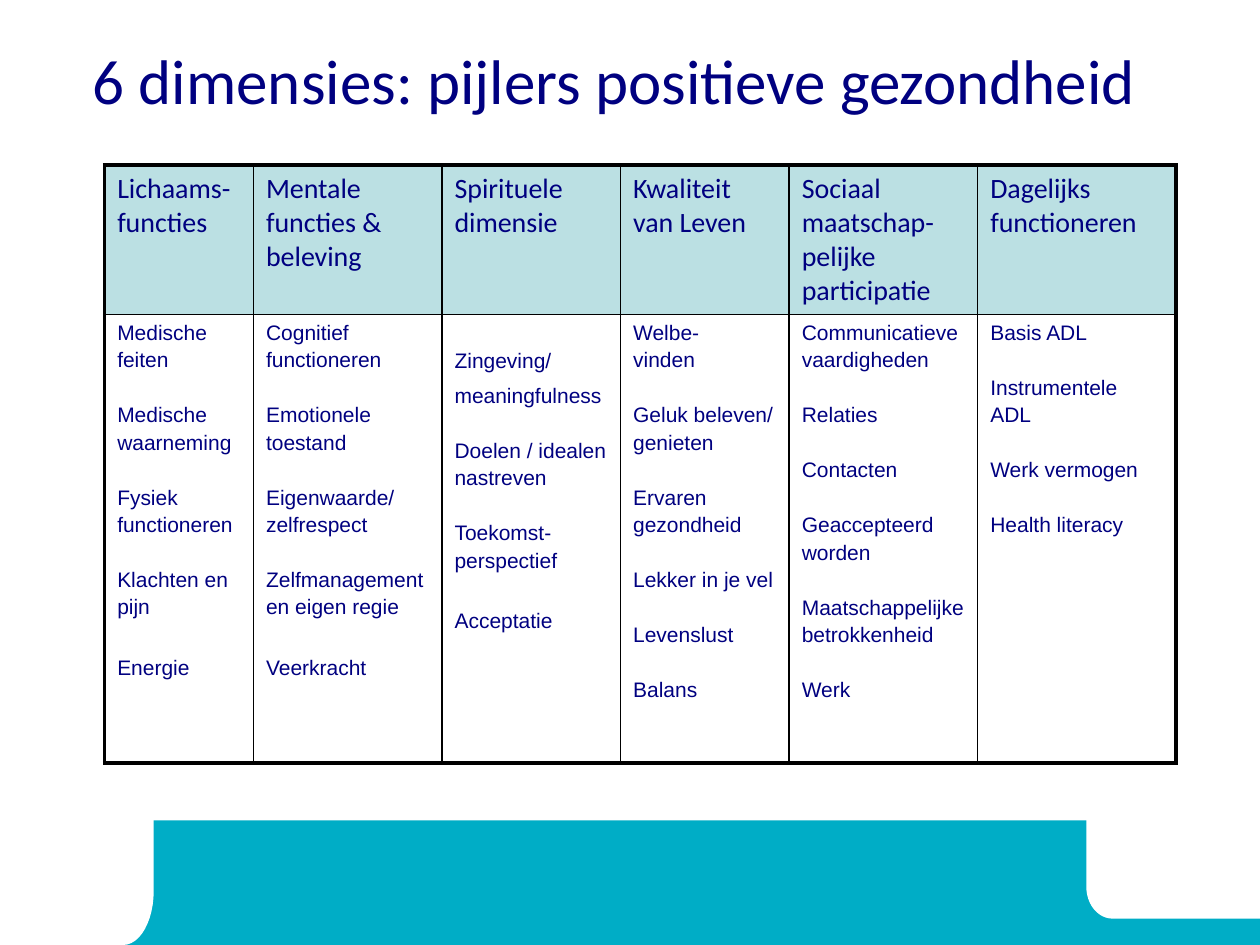
"""Builds a slide with the six dimensions of positive health in a table."""
from dataclasses import dataclass
from math import cos, pi, sin

from lxml import etree
from pptx import Presentation
from pptx.dml.color import RGBColor
from pptx.enum.shapes import MSO_SHAPE
from pptx.enum.text import MSO_ANCHOR, PP_ALIGN
from pptx.oxml.ns import qn
from pptx.util import Cm, Pt

RECTANGLE = MSO_SHAPE.RECTANGLE
MIDDLE = MSO_ANCHOR.MIDDLE
LEFT = PP_ALIGN.LEFT

COLOURS = {
    "text": "000080",
    "band": "00ADC6",
    "panel": "FFFFFF",
    "heading": "BBE0E3",
    "border": "000000",
}
HEADING_FONT = "Calibri"
BODY_FONT = "Arial"
LINE_GAP = 2.2
GROUP_GAP = 18
OTHER_GAPS = {"meaningfulness": 6.8, "Energie": 21, "Veerkracht": 21, "Acceptatie": 21}
OUTER_BORDER = 2.25
INNER_BORDER = 1


@dataclass
class Dimension:
    """One column: width in cm, heading, groups of lines and top margin in cm."""
    width: float
    heading: str
    groups: list
    top: float = 0.13


DIMENSIONS = [
    Dimension(3.0, "Lichaams-functies", [
        "Medische\nfeiten", "Medische\nwaarneming", "Fysiek\nfunctioneren",
        "Klachten en\npijn", "Energie"]),
    Dimension(3.8, "Mentale functies & beleving", [
        "Cognitief\nfunctioneren", "Emotionele\ntoestand", "Eigenwaarde/\nzelfrespect",
        "Zelfmanagement\nen eigen regie", "Veerkracht"]),
    Dimension(3.6, "Spirituele dimensie", [
        "Zingeving/", "meaningfulness", "Doelen / idealen\nnastreven",
        "Toekomst-\nperspectief", "Acceptatie"], top=0.69),
    Dimension(3.4, "Kwaliteit van Leven", [
        "Welbe-\nvinden", "Geluk beleven/\ngenieten", "Ervaren\ngezondheid",
        "Lekker in je vel", "Levenslust", "Balans"]),
    Dimension(3.8, "Sociaal maatschap-pelijke participatie", [
        "Communicatieve\nvaardigheden", "Relaties", "Contacten",
        "Geaccepteerd\nworden", "Maatschappelijke\nbetrokkenheid", "Werk"]),
    Dimension(4.0, "Dagelijks functioneren", [
        "Basis ADL", "Instrumentele\nADL", "Werk vermogen", "Health literacy"]),
]


@dataclass
class HealthSlide:
    """Holds the slide and draws its elements in one style; lengths are in cm."""
    slide: object

    def paint(self, shape, colour):
        """Give a shape a plain fill without line or shadow."""
        shape.shadow.inherit = False
        shape.fill.solid()
        shape.fill.fore_color.rgb = RGBColor.from_string(COLOURS[colour])
        shape.line.fill.background()

    def band(self, left, top, width, height):
        """Draw the coloured band."""
        band = self.slide.shapes.add_shape(
            RECTANGLE, Cm(left), Cm(top), Cm(width), Cm(height))
        self.paint(band, "band")

    def panel(self, edge, top, width, height, radius_x, radius_y):
        """Draw a panel from a straight edge; a negative width goes to the left."""
        direction = 1 if width > 0 else -1
        steps = 12
        centre_x = edge + width - direction * radius_x
        outline = [(edge, top + height), (edge, top)]
        for start, centre_y in ((-pi / 2, top + radius_y), (0, top + height - radius_y)):
            for step in range(steps + 1):
                angle = start + step * pi / 2 / steps
                outline.append((centre_x + direction * radius_x * cos(angle),
                                centre_y + radius_y * sin(angle)))
        corners = [(Cm(x), Cm(y)) for x, y in outline]
        builder = self.slide.shapes.build_freeform(*corners[0])
        builder.add_line_segments(corners[1:], close=True)
        self.paint(builder.convert_to_shape(), "panel")

    def style(self, paragraph, font, size, gap=0):
        """Set font and space before of a paragraph."""
        paragraph.alignment = LEFT
        paragraph.space_before = Pt(gap)
        paragraph.font.name = font
        paragraph.font.size = Pt(size)
        paragraph.font.color.rgb = RGBColor.from_string(COLOURS["text"])

    def title(self, wording, left, top, width, height):
        """Fill the title placeholder and bring it to the front."""
        title = self.slide.shapes.title
        title.left, title.top, title.width, title.height = map(
            Cm, (left, top, width, height))
        frame = title.text_frame
        frame.text = wording
        frame.word_wrap = True
        frame.vertical_anchor = MIDDLE
        frame.margin_left = Cm(0.57)
        self.style(frame.paragraphs[0], HEADING_FONT, 36)
        title.element.getparent().append(title.element)

    def borders(self, cell, outer_sides):
        """Draw the four borders of a cell, heavier on the outer sides."""
        properties = cell._tc.get_or_add_tcPr()
        for side in "LRTB":
            weight = OUTER_BORDER if side in outer_sides else INNER_BORDER
            line = etree.SubElement(properties, qn(f"a:ln{side}"), w=str(Pt(weight)))
            fill = etree.SubElement(line, qn("a:solidFill"))
            etree.SubElement(fill, qn("a:srgbClr"), val=COLOURS["border"])

    def fill_body(self, cell, dimension):
        """Write the groups of lines of one dimension."""
        frame = cell.text_frame
        frame.text = "\n".join(dimension.groups)
        cell.margin_top = Cm(dimension.top)
        gaps = []
        for group in dimension.groups:
            first, *others = group.split("\n")
            gaps += [OTHER_GAPS.get(first, GROUP_GAP)] + [LINE_GAP] * len(others)
        gaps[0] = 0
        for paragraph, gap in zip(frame.paragraphs, gaps):
            self.style(paragraph, BODY_FONT, 12, gap)

    def table(self, dimensions, left, top, row_heights):
        """Draw the table with one column for each dimension."""
        width = sum(dimension.width for dimension in dimensions)
        table = self.slide.shapes.add_table(
            len(row_heights), len(dimensions),
            Cm(left), Cm(top), Cm(width), Cm(sum(row_heights))).table
        table.first_row = table.horz_banding = False
        for row, height in zip(table.rows, row_heights):
            row.height = Cm(height)
        for index, dimension in enumerate(dimensions):
            table.columns[index].width = Cm(dimension.width)
            side = {0: "L", len(dimensions) - 1: "R"}.get(index, "")
            heading, body = table.cell(0, index), table.cell(1, index)
            self.borders(heading, side + "T")
            self.borders(body, side + "B")
            heading.fill.solid()
            heading.fill.fore_color.rgb = RGBColor.from_string(COLOURS["heading"])
            body.fill.background()
            heading.text_frame.text = dimension.heading
            self.style(heading.text_frame.paragraphs[0], HEADING_FONT, 16)
            self.fill_body(body, dimension)


def main():
    """Build and save the presentation."""
    presentation = Presentation()
    presentation.slide_width, presentation.slide_height = Cm(25.4), Cm(19.05)
    health = HealthSlide(presentation.slides.add_slide(presentation.slide_layouts[5]))
    health.band(0, 16.54, 25.4, 2.51)
    health.panel(25.4, 14.73, -3.5, 3.79, 0.53, 0.64)
    health.panel(0, 0, 3.1, 19.05, 0.61, 1.09)
    health.title("6 dimensies: pijlers positieve gezondheid", 1.3, 0, 22.86, 3.18)
    health.table(DIMENSIONS, 2.11, 3.33, (3, 9.04))
    presentation.save("out.pptx")


if __name__ == "__main__":
    main()
